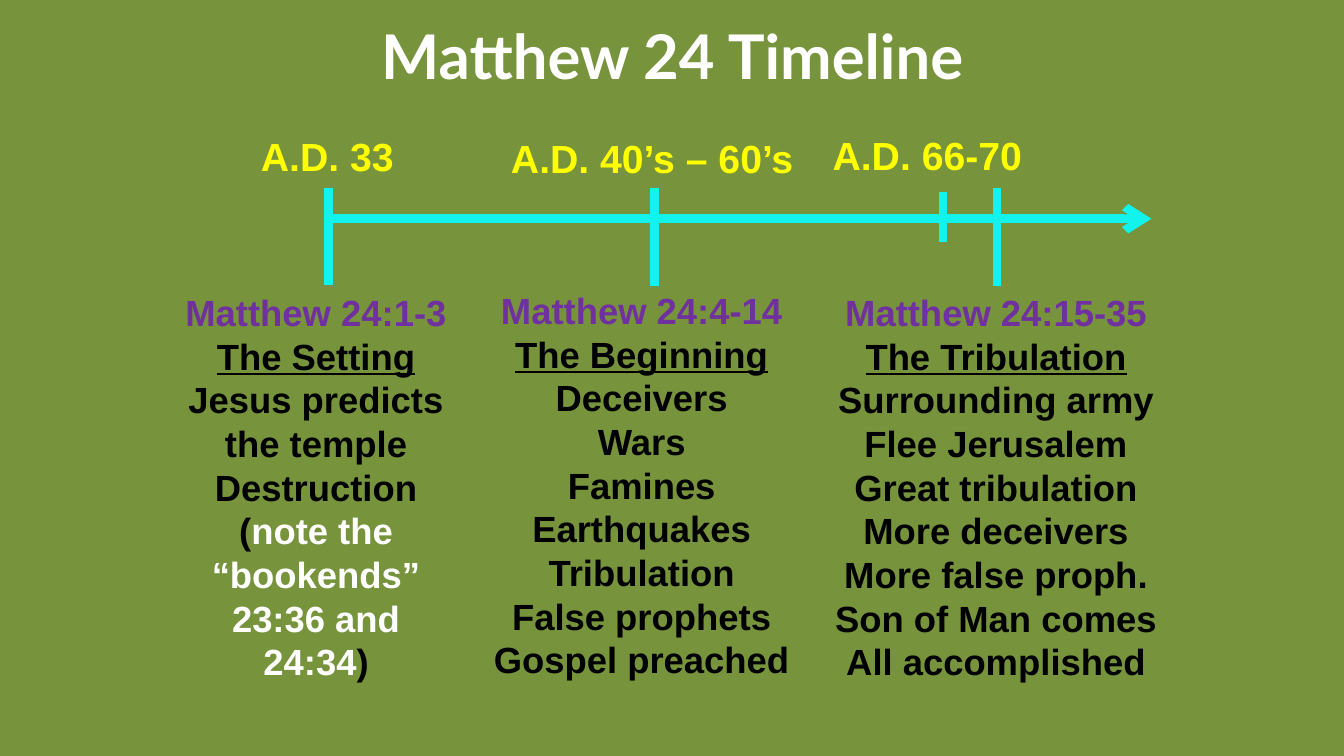
from lxml import etree
from pptx import Presentation
from pptx.dml.color import RGBColor
from pptx.enum.shapes import MSO_CONNECTOR
from pptx.enum.text import MSO_ANCHOR, PP_ALIGN
from pptx.oxml.ns import qn
from pptx.util import Inches, Pt

STRAIGHT = MSO_CONNECTOR.STRAIGHT
MIDDLE, TOP = MSO_ANCHOR.MIDDLE, MSO_ANCHOR.TOP
CENTER, LEFT = PP_ALIGN.CENTER, PP_ALIGN.LEFT

THEME = {
    "back": "77933C", "axis": "11F3EC", "width": 6,
    "title": {"name": "Lato", "size": 44, "color": "FFFFFF"},
    "date": {"name": "Arial", "size": 28, "color": "FFFF00"},
    "verse": {"name": "Arial", "size": 26, "color": "7030A0"},
    "head": {"name": "Arial", "size": 26, "color": "000000", "underline": True},
    "body": {"name": "Arial", "size": 26, "color": "000000"},
    "note": {"name": "Arial", "size": 26, "color": "FFFFFF"},
}

TITLE = ("Matthew 24 Timeline", (2.17, 0.12, 9, 0.85))
DATES = [
    ("A.D. 33", (2.49, 1.26, 1.53, 0.57)),
    ("A.D. 40’s – 60’s", (4.97, 1.28, 3.04, 0.57)),
    ("A.D. 66-70", (8.16, 1.25, 2.1, 0.57)),
]
AXIS = (3.25, 2.17, 11.42, 2.17)
TICKS = [(3.26, 1.87, 2.83), (6.49, 1.87, 2.84), (9.35, 1.9, 2.4), (9.89, 1.87, 2.84)]

# Each era: box, verse, heading, body lines, then lines of styled runs.
ERAS = [
    ((1.74, 2.83, 2.79, 4.04), "Matthew 24:1-3", "The Setting",
     ["Jesus predicts", "the temple", "Destruction"],
     [[("(", "body"), ("note the", "note")],
      [("“bookends”", "note")],
      [("23:36 and 24:34", "note"), (")", "body")]]),
    ((4.72, 2.81, 3.29, 4.19), "Matthew 24:4-14", "The Beginning",
     ["Deceivers", "Wars", "Famines", "Earthquakes", "Tribulation",
      "False prophets", "Gospel preached"], []),
    ((8.17, 2.83, 3.42, 4.04), "Matthew 24:15-35", "The Tribulation",
     ["Surrounding army", "Flee Jerusalem", "Great tribulation", "More deceivers",
      "More false proph.", "Son of Man comes", "All accomplished"], []),
]


def style(font, look):
    values = {**look, "size": Pt(look["size"]), "bold": True}
    font.color.rgb = RGBColor.from_string(values.pop("color"))
    for key, value in values.items():
        setattr(font, key, value)


def add_text(slide, box, lines, align=CENTER, anchor=TOP, wrap=True):
    """Add a text box; each line is a list of (text, style name) runs."""
    frame = slide.shapes.add_textbox(*map(Inches, box)).text_frame
    frame.word_wrap = wrap
    frame.vertical_anchor = anchor
    for i, runs in enumerate(lines):
        para = frame.add_paragraph() if i else frame.paragraphs[0]
        para.alignment = align
        for text, look in runs:
            run = para.add_run()
            run.text = text
            style(run.font, THEME[look])


def add_line(slide, ends, arrow=False):
    link = slide.shapes.add_connector(STRAIGHT, *map(Inches, ends))
    link.line.color.rgb = RGBColor.from_string(THEME["axis"])
    link.line.width = Pt(THEME["width"])
    props = link._element.spPr
    if arrow:
        etree.SubElement(props.find(qn("a:ln")), qn("a:tailEnd"), type="arrow")
    etree.SubElement(props, qn("a:effectLst"))


def main():
    deck = Presentation()
    deck.slide_width, deck.slide_height = Inches(13.33), Inches(7.5)
    slide = deck.slides.add_slide(deck.slide_layouts[6])
    fill = slide.background.fill
    fill.solid()
    fill.fore_color.rgb = RGBColor.from_string(THEME["back"])

    text, box = TITLE
    add_text(slide, box, [[(text, "title")]], anchor=MIDDLE)
    add_line(slide, AXIS, arrow=True)
    for x, top, end in TICKS:
        add_line(slide, (x, top, x, end))
    for text, box in DATES:
        add_text(slide, box, [[(text, "date")]], align=LEFT, wrap=False)
    for box, verse, head, body, notes in ERAS:
        lines = [[(verse, "verse")], [(head, "head")]]
        lines += [[(text, "body")] for text in body]
        add_text(slide, box, lines + notes)

    deck.save("out.pptx")


if __name__ == "__main__":
    main()
